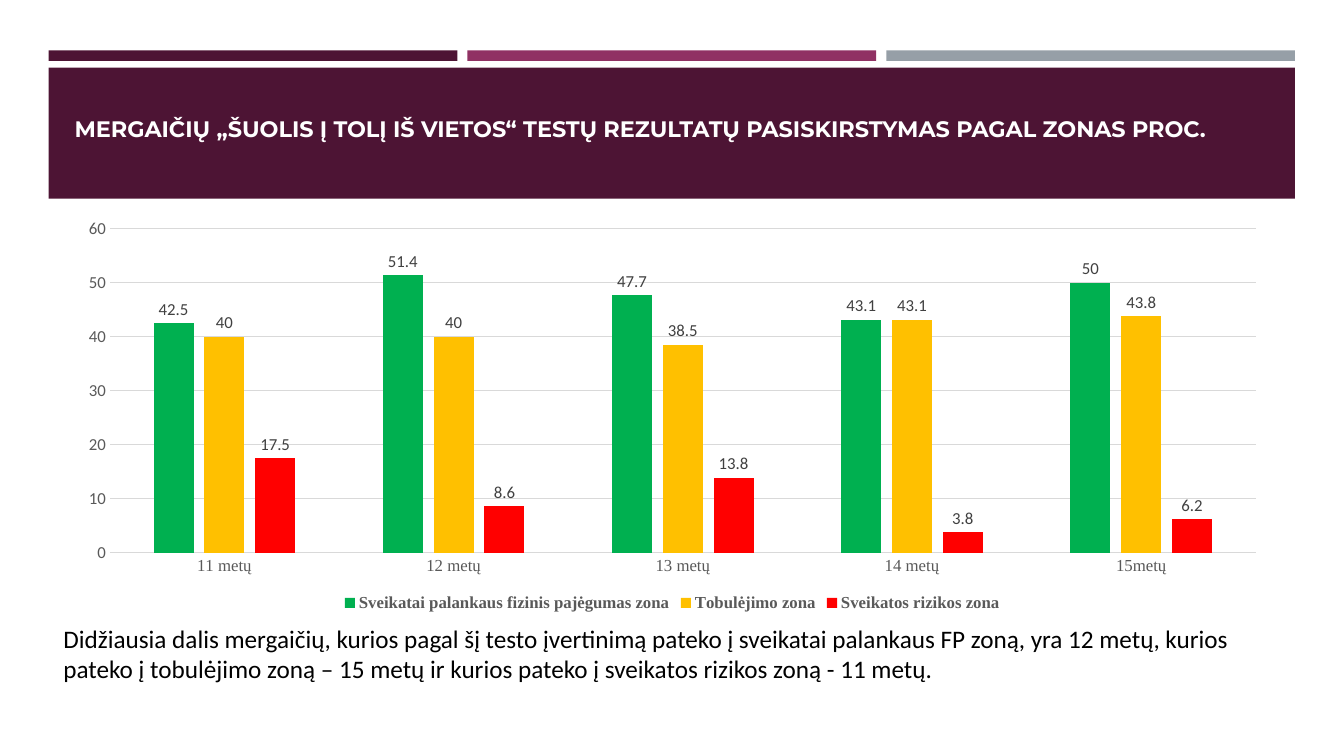
from pptx import Presentation
from pptx.chart.data import CategoryChartData
from pptx.dml.color import RGBColor
from pptx.enum.chart import XL_CHART_TYPE, XL_LABEL_POSITION, XL_LEGEND_POSITION, XL_TICK_MARK
from pptx.enum.shapes import MSO_SHAPE
from pptx.enum.text import MSO_ANCHOR, MSO_AUTO_SIZE, PP_ALIGN
from pptx.util import Pt

COLORS = {
    "plum": "4D1434", "magenta": "903163", "slate": "969FA7",
    "white": "FFFFFF", "black": "000000", "axis": "595959",
    "label": "404040", "grid": "D9D9D9",
    "healthy": "00B050", "improving": "FFC000", "risk": "FF0000",
}
AGES = ["11 metų", "12 metų", "13 metų", "14 metų", "15metų"]
ZONES = [
    ("Sveikatai palankaus fizinis pajėgumas zona", "healthy", (42.5, 51.4, 47.7, 43.1, 50)),
    ("Tobulėjimo zona", "improving", (40, 40, 38.5, 43.1, 43.8)),
    ("Sveikatos rizikos zona", "risk", (17.5, 8.6, 13.8, 3.8, 6.2)),
]
TITLE = "MERGAIČIŲ „ŠUOLIS Į TOLĮ IŠ VIETOS“ TESTŲ REZULTATŲ PASISKIRSTYMAS PAGAL ZONAS PROC."
SUMMARY = (
    "Didžiausia dalis mergaičių, kurios pagal šį testo įvertinimą pateko į sveikatai "
    "palankaus FP zoną, yra 12 metų, kurios pateko į tobulėjimo zoną – 15 metų ir kurios "
    "pateko į sveikatos rizikos zoną - 11 metų."
)


def rgb(name):
    return RGBColor.from_string(COLORS[name])


def style_font(font, face, size, color, bold=False):
    font.name = face
    font.size = Pt(size)
    font.bold = bold
    font.color.rgb = rgb(color)


def add_block(slide, left, top, width, height, color):
    block = slide.shapes.add_shape(
        MSO_SHAPE.RECTANGLE, Pt(left), Pt(top), Pt(width), Pt(height))
    block.shadow.inherit = False
    block.fill.solid()
    block.fill.fore_color.rgb = rgb(color)
    block.line.fill.background()


def fill_text(frame, text, anchor, bottom_margin):
    frame.text = text
    frame.word_wrap = True
    frame.auto_size = MSO_AUTO_SIZE.NONE
    frame.vertical_anchor = anchor
    frame.margin_bottom = Pt(bottom_margin)
    paragraph = frame.paragraphs[0]
    paragraph.alignment = PP_ALIGN.LEFT
    return paragraph.runs[0].font


def add_header(slide, left, top, width, height):
    gap, stripe_height = 7.2, 7.6
    stripe_width = (width - 2 * gap) / 3
    for index, color in enumerate(("plum", "magenta", "slate")):
        add_block(slide, left + index * (stripe_width + gap), top,
                  stripe_width, stripe_height, color)
    band_top = top + 12.4
    add_block(slide, left, band_top, width, height - 12.4, "plum")

    title = slide.shapes.title
    title.left, title.top = Pt(left + 11.3), Pt(top + 7.9)
    title.width, title.height = Pt(width - 22.3), Pt(80)
    font = fill_text(title.text_frame, TITLE, MSO_ANCHOR.BOTTOM, 22.8)
    style_font(font, "Montserrat", 16, "white", True)
    slide.shapes._spTree.append(title._element)


def add_zone_chart(slide, left, top, width, height):
    data = CategoryChartData()
    data.categories = AGES
    for name, color, values in ZONES:
        data.add_series(name, values)
    chart = slide.shapes.add_chart(
        XL_CHART_TYPE.COLUMN_CLUSTERED, Pt(left), Pt(top), Pt(width), Pt(height), data).chart
    style_font(chart.font, "Calibri", 10, "black")
    chart.has_title = False
    chart.has_legend = True
    chart.legend.position = XL_LEGEND_POSITION.BOTTOM
    chart.legend.include_in_layout = False
    style_font(chart.legend.font, "Times New Roman", 12, "axis", True)

    ages, percents = chart.category_axis, chart.value_axis
    for axis, face in ((ages, "Times New Roman"), (percents, "Calibri")):
        axis.major_tick_mark = axis.minor_tick_mark = XL_TICK_MARK.NONE
        style_font(axis.tick_labels.font, face, 12, "axis")
    percents.minimum_scale, percents.maximum_scale, percents.major_unit = 0, 60, 10
    percents.format.line.fill.background()
    for line in (ages.format.line, percents.major_gridlines.format.line):
        line.color.rgb = rgb("grid")
        line.width = Pt(0.75)

    plot = chart.plots[0]
    plot.vary_by_categories = False
    plot.gap_width, plot.overlap = 219, -27
    for series, (name, color, values) in zip(plot.series, ZONES):
        series.format.fill.solid()
        series.format.fill.fore_color.rgb = rgb(color)
        series.invert_if_negative = False
        labels = series.data_labels
        labels.show_value = True
        labels.position = XL_LABEL_POSITION.OUTSIDE_END
        style_font(labels.font, "Calibri", 12, "label")


def add_summary(slide, left, top, width, height):
    summary = slide.shapes.add_textbox(Pt(left), Pt(top), Pt(width), Pt(height))
    font = fill_text(summary.text_frame, SUMMARY, MSO_ANCHOR.MIDDLE, 30)
    style_font(font, "Calibri", 18, "black")


def main():
    deck = Presentation()
    deck.slide_width, deck.slide_height = Pt(960), Pt(540)
    slide = deck.slides.add_slide(deck.slide_layouts[5])
    add_header(slide, 34.8, 36, 890.2, 106)
    add_zone_chart(slide, 46.1, 150.5, 868.3, 289.4)
    add_summary(slide, 38.2, 427, 868.3, 105.8)
    deck.save("out.pptx")


if __name__ == "__main__":
    main()
